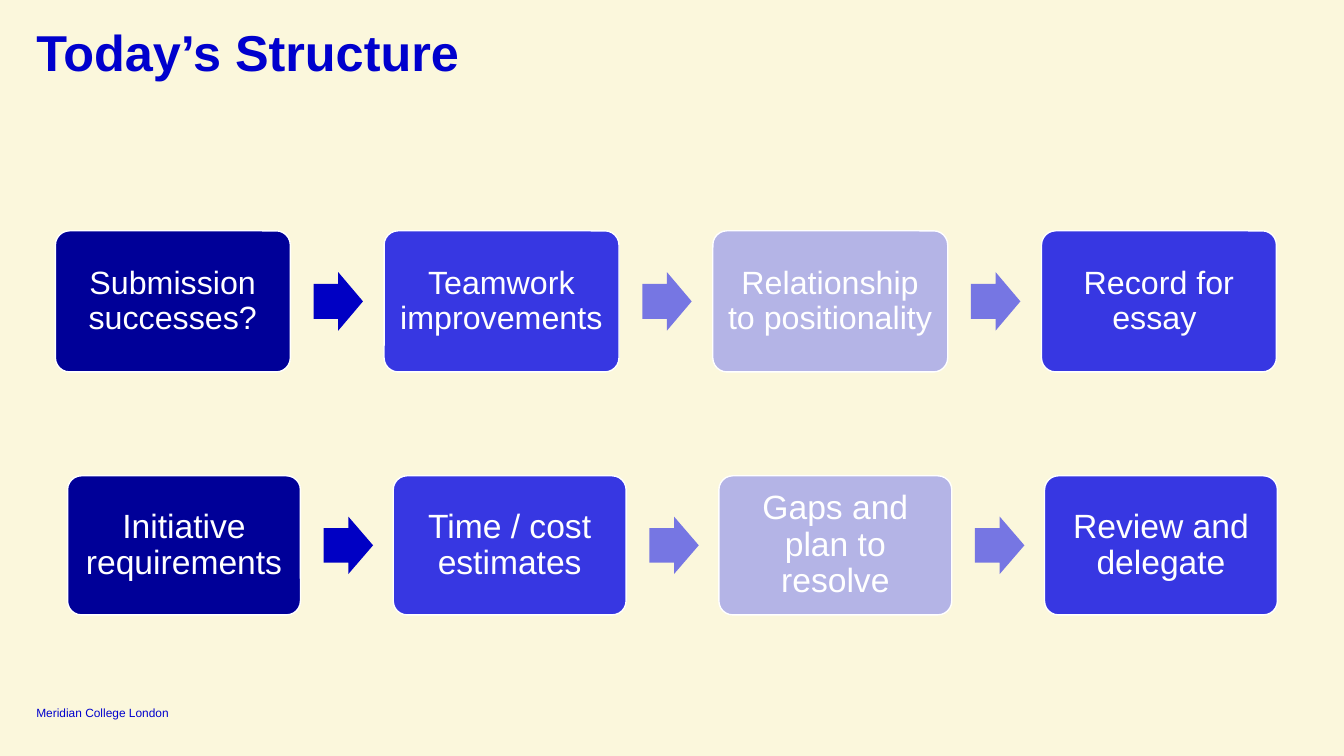
"""Build the "Today's Structure" slide: two rows of four linked steps."""
from pptx import Presentation
from pptx.dml.color import RGBColor
from pptx.enum.shapes import MSO_SHAPE
from pptx.enum.text import MSO_ANCHOR, PP_ALIGN
from pptx.util import Inches, Pt

ROUND_RECT, RIGHT_ARROW = MSO_SHAPE.ROUNDED_RECTANGLE, MSO_SHAPE.RIGHT_ARROW
TOP, MIDDLE, BOTTOM = MSO_ANCHOR.TOP, MSO_ANCHOR.MIDDLE, MSO_ANCHOR.BOTTOM
LEFT, CENTER = PP_ALIGN.LEFT, PP_ALIGN.CENTER

TITLE = "Today’s Structure"
FOOTER = "Meridian College London"
BACKGROUND, BRAND_BLUE, WHITE = "FBF7DC", "0000CD", "FFFFFF"
BOX_FILLS = ["000098", "3737E2", "B4B4E6", "3737E2"]
ARROW_FILLS = ["0000C4", "7676E3", "7676E3"]
ARROW_GAP, ARROW_W = 0.23, 0.49
ROWS = [
    dict(left=0.55, top=2.29, w=2.33, h=1.4, pitch=3.26, arrow_h=0.58, size=23,
         steps=["Submission successes?", "Teamwork improvements",
                "Relationship to positionality", "Record for essay "]),
    dict(left=0.67, top=4.72, w=2.31, h=1.38, pitch=3.23, arrow_h=0.57, size=24,
         steps=["Initiative requirements", "Time / cost estimates",
                "Gaps and plan to resolve", "Review and delegate"]),
]


def rgb(value):
    return RGBColor.from_string(value)


def write(sp, text, size, color, bold=False, align=LEFT, anchor=TOP, inset=0, spacing=1.0):
    tf = sp.text_frame
    tf.word_wrap = True
    tf.vertical_anchor = anchor
    tf.margin_left = tf.margin_right = tf.margin_top = tf.margin_bottom = Inches(inset)
    p = tf.paragraphs[0]
    p.alignment = align
    p.line_spacing = spacing
    r = p.add_run()
    r.text = text
    r.font.name = "Arial"
    r.font.size = Pt(size)
    r.font.bold = bold
    r.font.color.rgb = rgb(color)


def add_text(s, x, y, w, h, text, **fmt):
    write(s.shapes.add_textbox(Inches(x), Inches(y), Inches(w), Inches(h)), text, **fmt)


def add_shape(s, kind, x, y, w, h, fill, adjustments, line=None):
    sp = s.shapes.add_shape(kind, Inches(x), Inches(y), Inches(w), Inches(h))
    sp.shadow.inherit = False
    for i, value in enumerate(adjustments):
        sp.adjustments[i] = value
    sp.fill.solid()
    sp.fill.fore_color.rgb = rgb(fill)
    if line:
        sp.line.color.rgb = rgb(line)
        sp.line.width = Pt(1)
    else:
        sp.line.fill.background()
    return sp


def add_row(s, row):
    w, h, top = row["w"], row["h"], row["top"]
    arrow_top = top + (h - row["arrow_h"]) / 2
    for i, step in enumerate(row["steps"]):
        x = row["left"] + i * row["pitch"]
        box = add_shape(s, ROUND_RECT, x, top, w, h, BOX_FILLS[i], [0.1], line=WHITE)
        write(box, step, row["size"], WHITE, align=CENTER, anchor=MIDDLE,
              inset=0.1, spacing=0.9)
        if i < len(ARROW_FILLS):
            add_shape(s, RIGHT_ARROW, x + w + ARROW_GAP, arrow_top, ARROW_W,
                      row["arrow_h"], ARROW_FILLS[i], [0.6, 0.5])


def main():
    prs = Presentation()
    prs.slide_width, prs.slide_height = Inches(13.33), Inches(7.5)
    s = prs.slides.add_slide(prs.slide_layouts[6])
    s.background.fill.solid()
    s.background.fill.fore_color.rgb = rgb(BACKGROUND)
    add_text(s, 0.36, 6.99, 1.55, 0.15, FOOTER, size=8.5, color=BRAND_BLUE, anchor=BOTTOM)
    add_text(s, 0.36, 0.28, 12.62, 0.41, TITLE, size=36, color=BRAND_BLUE,
             bold=True, spacing=0.9)
    for row in ROWS:
        add_row(s, row)
    prs.save("out.pptx")


if __name__ == "__main__":
    main()
